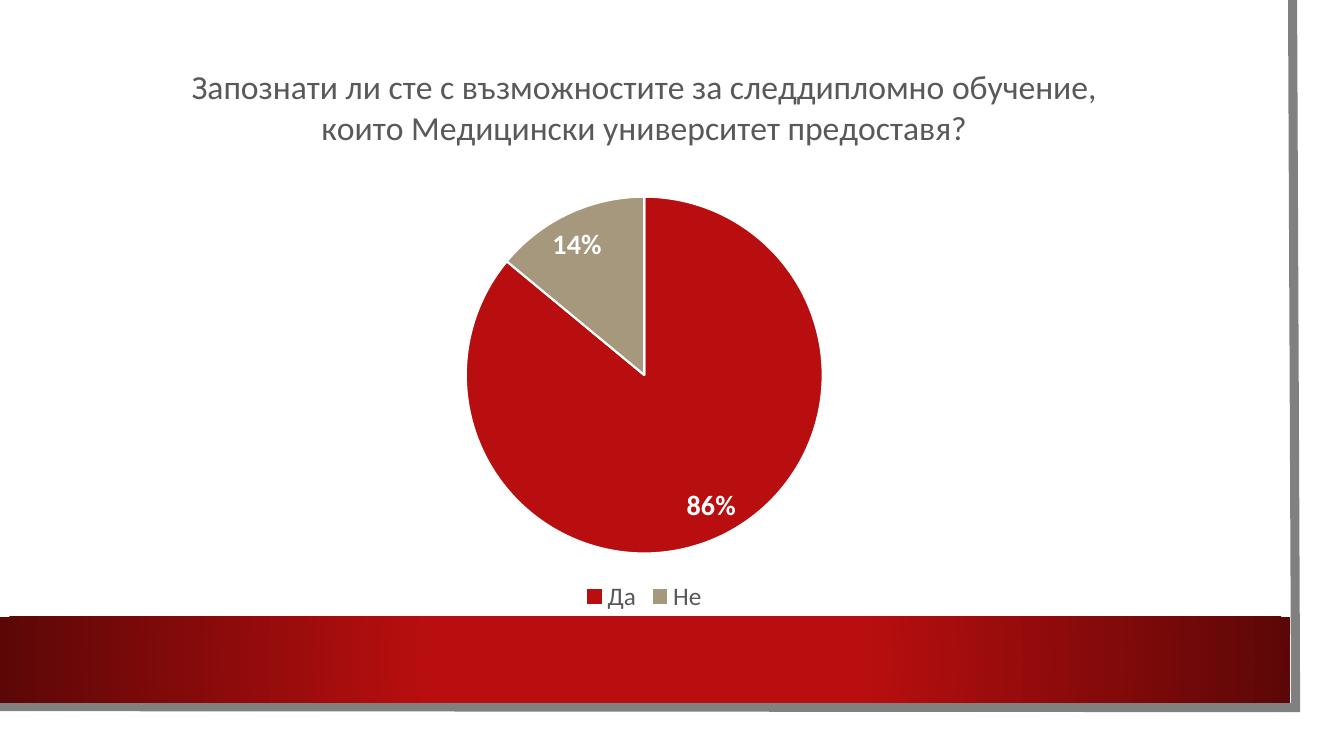
"""Build a slide with a pie chart on awareness of postgraduate training."""
from lxml import etree
from pptx import Presentation
from pptx.chart.data import CategoryChartData
from pptx.dml.color import RGBColor
from pptx.enum.chart import XL_CHART_TYPE, XL_LABEL_POSITION, XL_LEGEND_POSITION
from pptx.enum.shapes import MSO_SHAPE
from pptx.oxml import parse_xml
from pptx.oxml.ns import nsdecls, qn
from pptx.util import Inches, Pt

PIE = XL_CHART_TYPE.PIE
BEST_FIT = XL_LABEL_POSITION.BEST_FIT
BOTTOM = XL_LEGEND_POSITION.BOTTOM
RECTANGLE = MSO_SHAPE.RECTANGLE

COLORS = {
    "red": "B80E0F",
    "dark_red": "5C0707",
    "sand": "A6987D",
    "gray": "808080",
    "text": "595959",
    "white": "FFFFFF",
}
ANSWERS = [("Да", 86, "red"), ("Не", 14, "sand")]
QUESTION = (
    "Запознати ли сте с възможностите за следдипломно обучение, "
    "които Медицински университет предоставя?"
)
PIE_AREA = {"x": 0.35, "y": 0.27, "w": 0.3, "h": 0.62}


def color(name):
    return RGBColor.from_string(COLORS[name])


def style_font(font, size, color_name, bold=False):
    font.name = "Calibri"
    font.size = Pt(size)
    font.bold = bold
    font.color.rgb = color(color_name)


deck = Presentation()
deck.slide_width = Inches(13.33)
deck.slide_height = Inches(7.5)
page = deck.slides.add_slide(deck.slide_layouts[6])

builder = page.shapes.build_freeform(Inches(12.82), 0)
builder.add_line_segments(
    [(Inches(12.85), Inches(7.02)), (Inches(-0.03), Inches(7.01))], close=False
)
edge = builder.convert_to_shape()
edge.shadow.inherit = False
edge.fill.background()
edge.line.color.rgb = color("gray")
edge.line.width = Pt(6.5)
etree.SubElement(edge.line._get_or_add_ln(), qn("a:miter"), lim="800000")

band = page.shapes.add_shape(RECTANGLE, 0, Inches(6.12), Inches(12.8), Inches(0.85))
band.shadow.inherit = False
band.line.fill.background()
band.fill.gradient()
gradient = parse_xml(
    f'<a:gradFill {nsdecls("a")} rotWithShape="1"><a:gsLst>'
    f'<a:gs pos="34000"><a:srgbClr val="{COLORS["red"]}"/></a:gs>'
    f'<a:gs pos="100000"><a:srgbClr val="{COLORS["dark_red"]}"/></a:gs>'
    '</a:gsLst><a:path path="circle">'
    '<a:fillToRect l="50000" t="50000" r="50000" b="50000"/>'
    "</a:path></a:gradFill>"
)
band_properties = band.element.spPr
band_properties.replace(band_properties.find(qn("a:gradFill")), gradient)

data = CategoryChartData()
data.categories = [answer for answer, share, fill in ANSWERS]
data.add_series("Series 1", [share for answer, share, fill in ANSWERS])
frame = page.shapes.add_chart(
    PIE, Inches(0.39), Inches(0.41), Inches(12), Inches(5.71), data
)
chart = frame.chart
chart.font.name = "Arial Narrow"
chart.font.size = Pt(10)

chart.has_title = True
title = chart.chart_title
title.include_in_layout = False
span = title.text_frame.paragraphs[0].add_run()
span.text = QUESTION
style_font(span.font, 24, "text")

chart.has_legend = True
chart.legend.position = BOTTOM
chart.legend.include_in_layout = False
style_font(chart.legend.font, 18, "text")

plot = chart.plots[0]
plot.vary_by_categories = True
for index, (answer, share, fill) in enumerate(ANSWERS):
    slice_format = plot.series[0].points[index].format
    slice_format.fill.solid()
    slice_format.fill.fore_color.rgb = color(fill)
    slice_format.line.color.rgb = color("white")
    slice_format.line.width = Pt(1.5)

labels = plot.series[0].data_labels
labels.show_value = False
labels.show_percentage = True
labels.number_format = "0%"
labels.number_format_is_linked = False
labels.position = BEST_FIT
style_font(labels.font, 20, "white", bold=True)

plot_area = chart.element.find(".//" + qn("c:plotArea"))
layout = plot_area.find(qn("c:layout"))
if layout is None:
    layout = etree.Element(qn("c:layout"))
    plot_area.insert(0, layout)
manual = etree.SubElement(layout, qn("c:manualLayout"))
etree.SubElement(manual, qn("c:layoutTarget"), val="inner")
for side in "xy":
    etree.SubElement(manual, qn(f"c:{side}Mode"), val="edge")
for side, fraction in PIE_AREA.items():
    etree.SubElement(manual, qn(f"c:{side}"), val=str(fraction))

deck.save("out.pptx")
